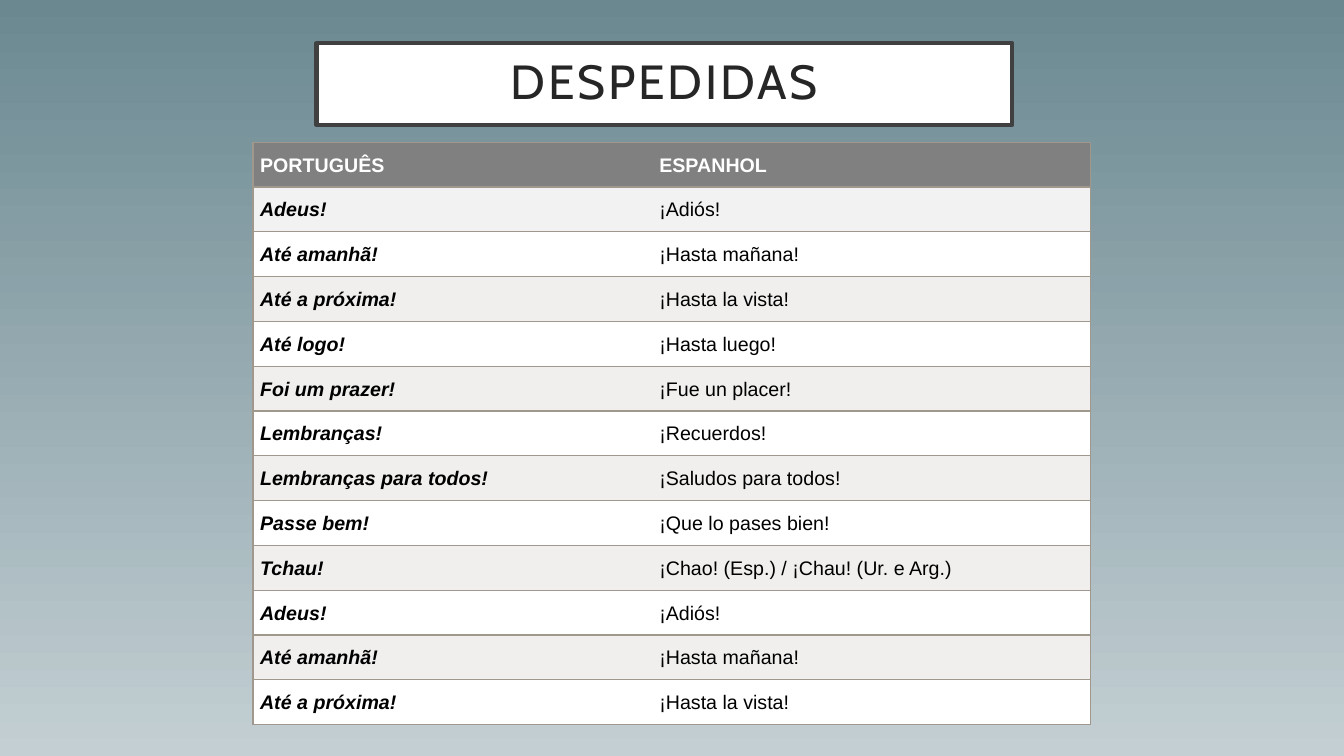
from lxml import etree
from pptx import Presentation
from pptx.dml.color import RGBColor
from pptx.enum.shapes import MSO_SHAPE
from pptx.enum.text import MSO_ANCHOR, PP_ALIGN
from pptx.oxml.ns import qn
from pptx.util import Inches, Pt

RECTANGLE = MSO_SHAPE.RECTANGLE
MIDDLE = MSO_ANCHOR.MIDDLE
LEFT, CENTER = PP_ALIGN.LEFT, PP_ALIGN.CENTER

SLIDE_WIDTH, SLIDE_HEIGHT = 13.33, 7.5
TITLE_BOX = (3.14, 0.43, 6.9, 0.81)
TABLE_BOX = (2.51, 1.41, 8.31, 5.78)
PORTUGUESE_SHARE = 3.96 / 8.31

WHITE, BLACK = "FFFFFF", "000000"
HEADER_FILL, FIRST_FILL, BAND_FILL = "808080", "F2F2F2", "F0EFEE"
BORDER_COLOR, BORDER_WIDTH = "A0988C", 1

HEADINGS = ("PORTUGUÊS", "ESPANHOL")
FAREWELLS = [
    ("Adeus!", "¡Adiós!"),
    ("Até amanhã!", "¡Hasta mañana!"),
    ("Até a próxima!", "¡Hasta la vista!"),
    ("Até logo!", "¡Hasta luego!"),
    ("Foi um prazer!", "¡Fue un placer!"),
    ("Lembranças!", "¡Recuerdos!"),
    ("Lembranças para todos!", "¡Saludos para todos!"),
    ("Passe bem!", "¡Que lo pases bien!"),
    ("Tchau!", "¡Chao! (Esp.) / ¡Chau! (Ur. e Arg.)"),
]
ROWS = [HEADINGS] + FAREWELLS + FAREWELLS[:3]


def color(hex_string):
    return RGBColor.from_string(hex_string)


def write(text_frame, text, font="Arial", size=14, text_color=BLACK, bold=False,
          italic=False, align=LEFT, line_spacing=1.07, letter_spacing=0):
    paragraph = text_frame.paragraphs[0]
    paragraph.alignment = align
    paragraph.line_spacing = line_spacing
    run = paragraph.add_run()
    run.text = text
    run.font.name = font
    run.font.size = Pt(size)
    run.font.bold = bold
    run.font.italic = italic
    run.font.color.rgb = color(text_color)
    if letter_spacing:
        run.font._element.set("spc", str(letter_spacing * 100))


def set_borders(cell, visible_sides):
    properties = cell._tc.get_or_add_tcPr()
    for index, side in enumerate("LRTB"):
        line = etree.Element(qn(f"a:ln{side}"), w=str(Pt(BORDER_WIDTH)))
        if side in visible_sides:
            fill = etree.SubElement(line, qn("a:solidFill"))
            etree.SubElement(fill, qn("a:srgbClr"), val=BORDER_COLOR)
        else:
            etree.SubElement(line, qn("a:noFill"))
        properties.insert(index, line)


def row_fill(row_index):
    if row_index < 2:
        return (HEADER_FILL, FIRST_FILL)[row_index]
    return BAND_FILL if row_index % 2 else WHITE


def add_background(slide):
    fill = slide.background.fill
    fill.gradient()
    fill.gradient_angle = 270
    for stop, stop_color in zip(fill.gradient_stops, ("6B8891", "C3CFD3")):
        stop.color.rgb = color(stop_color)


def add_title(slide, box):
    shape = slide.shapes.add_shape(RECTANGLE, *map(Inches, box))
    shape.shadow.inherit = False
    shape.fill.solid()
    shape.fill.fore_color.rgb = color(WHITE)
    shape.line.color.rgb = color("404040")
    shape.line.width = Pt(3)
    frame = shape.text_frame
    frame.word_wrap = True
    frame.vertical_anchor = MIDDLE
    frame.margin_left = frame.margin_right = Inches(0.3)
    frame.margin_top = frame.margin_bottom = Inches(0.2)
    write(frame, "DESPEDIDAS", font="Cabin", size=34.2, text_color="262626",
          align=CENTER, line_spacing=0.9, letter_spacing=2)


def add_farewell_table(slide, box):
    width, height = box[2:]
    shape = slide.shapes.add_table(len(ROWS), len(HEADINGS), *map(Inches, box))
    table = shape.table
    for column, share in zip(table.columns, (PORTUGUESE_SHARE, 1 - PORTUGUESE_SHARE)):
        column.width = Inches(width * share)
    for row_index, texts in enumerate(ROWS):
        table.rows[row_index].height = Inches(height / len(ROWS))
        is_header = row_index == 0
        for column_index, text in enumerate(texts):
            is_portuguese = column_index == 0
            cell = table.cell(row_index, column_index)
            cell.vertical_anchor = MIDDLE
            cell.margin_left = cell.margin_right = Inches(0.07)
            cell.margin_top = cell.margin_bottom = 0
            cell.fill.solid()
            cell.fill.fore_color.rgb = color(row_fill(row_index))
            set_borders(cell, "LTB" if is_portuguese else "RTB")
            write(cell.text_frame, text, text_color=WHITE if is_header else BLACK,
                  bold=is_header or is_portuguese,
                  italic=is_portuguese and not is_header)


def main():
    presentation = Presentation()
    presentation.slide_width = Inches(SLIDE_WIDTH)
    presentation.slide_height = Inches(SLIDE_HEIGHT)
    slide = presentation.slides.add_slide(presentation.slide_layouts[6])
    add_background(slide)
    add_title(slide, TITLE_BOX)
    add_farewell_table(slide, TABLE_BOX)
    presentation.save("out.pptx")


if __name__ == "__main__":
    main()
